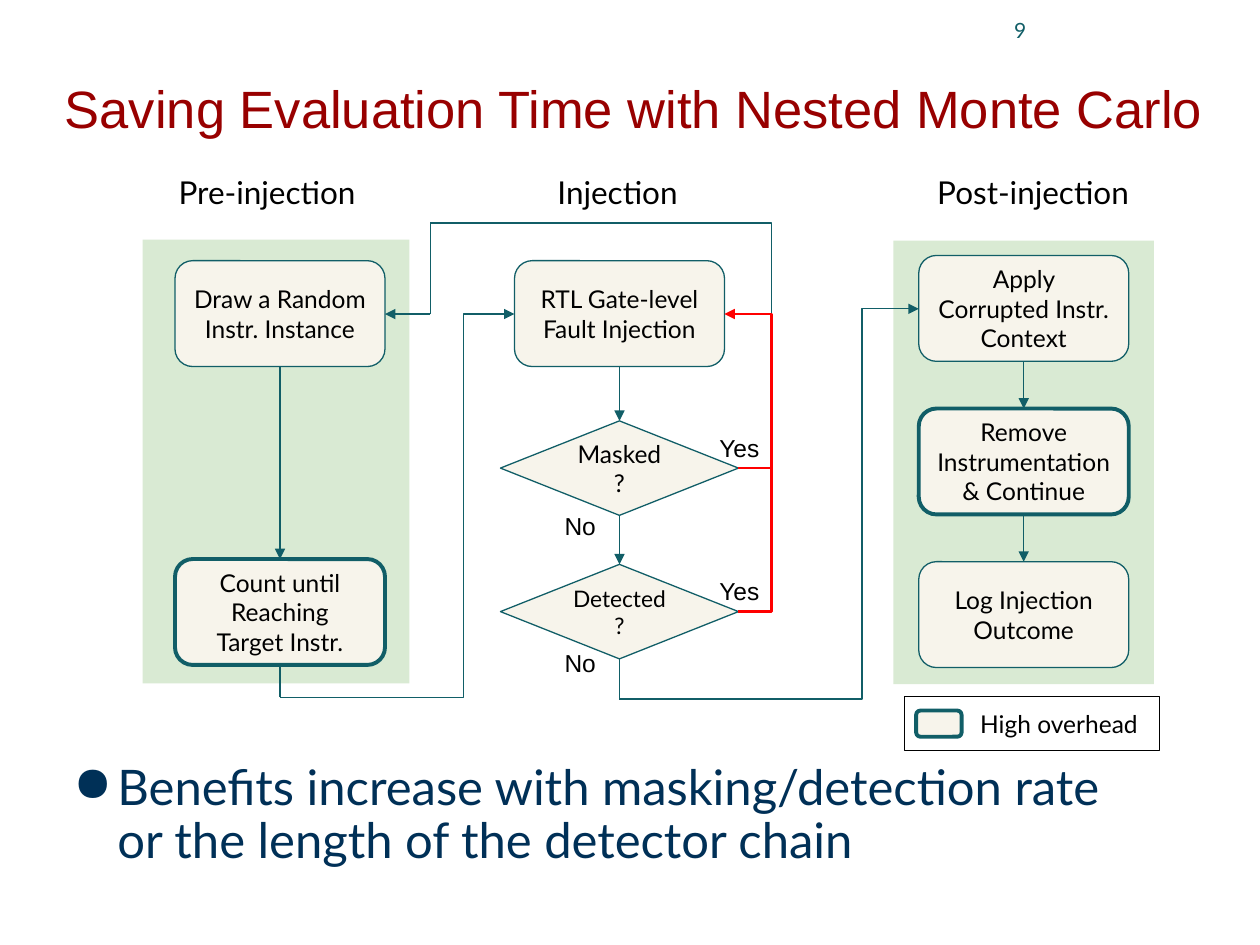
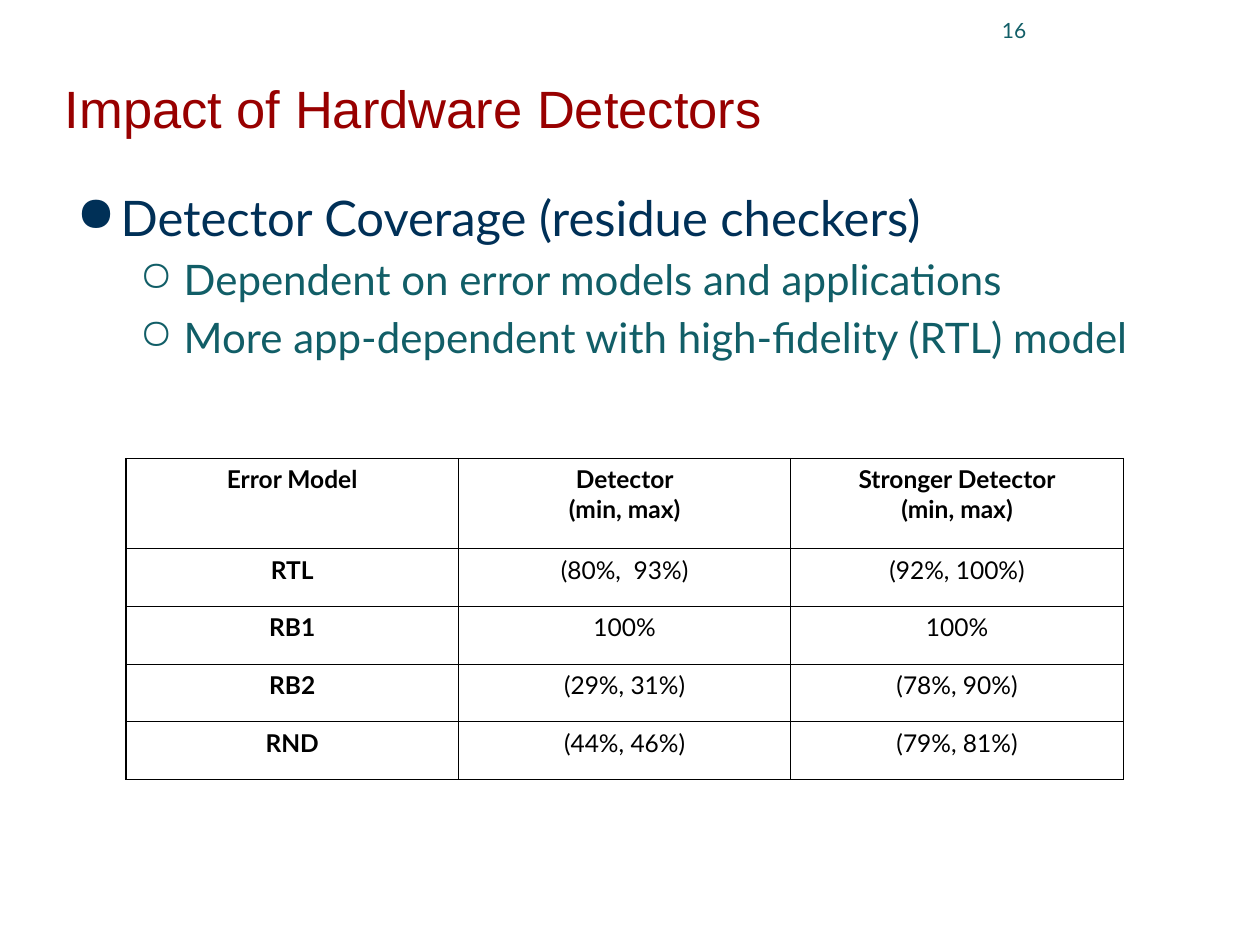
import pptx
import pptx.util
import pptx.oxml
import pptx.oxml.ns
import pptx.dml.color
import pptx.enum.shapes
import pptx.enum.text

Pt = pptx.util.Pt
RGB = pptx.dml.color.RGBColor
SHAPE = pptx.enum.shapes.MSO_SHAPE
LINK = pptx.enum.shapes.MSO_CONNECTOR
ALIGN = pptx.enum.text.PP_ALIGN
ANCHOR = pptx.enum.text.MSO_ANCHOR
qn = pptx.oxml.ns.qn
NS = pptx.oxml.ns.nsdecls("a")

MAROON = RGB(0x98, 0x00, 0x00)
NAVY = RGB(0x00, 0x30, 0x57)
TEAL = RGB(0x11, 0x5E, 0x67)
CREAM = RGB(0xF7, 0xF4, 0xEB)
GREEN = RGB(0xD9, 0xEA, 0xD3)
RED = RGB(0xFF, 0x00, 0x00)
BLACK = RGB(0, 0, 0)


def write(frame, text, size, color=BLACK, face="Lato", align=ALIGN.LEFT,
          anchor=ANCHOR.TOP, pad=7.2, bold=False):
    frame.text = text
    frame.word_wrap = True
    frame.vertical_anchor = anchor
    frame.margin_left = frame.margin_right = Pt(pad)
    frame.margin_top = frame.margin_bottom = Pt(pad)
    for para in frame.paragraphs:
        para.alignment = align
        for run in para.runs:
            run.font.size = Pt(size)
            run.font.name = face
            run.font.bold = bold
            run.font.color.rgb = color


def wire(start, end, bend=None, color=TEAL, width=0.75, arrow=True):
    """Straight line, or an elbow whose upright part stands at x = bend."""
    kind = LINK.STRAIGHT if bend is None else LINK.ELBOW
    line = flow.shapes.add_connector(kind, *[Pt(v) for v in start + end])
    line.line.color.rgb = color
    line.line.width = Pt(width)
    props = line._element.spPr
    if bend is not None:
        ratio = round((bend - start[0]) / (end[0] - start[0]) * 100000)
        geom = props.find(qn("a:prstGeom"))
        geom.remove(geom.find(qn("a:avLst")))
        geom.append(pptx.oxml.parse_xml(
            f'<a:avLst {NS}><a:gd name="adj1" fmla="val {ratio}"/></a:avLst>'))
    if arrow:
        props.find(qn("a:ln")).append(
            pptx.oxml.parse_xml(f'<a:tailEnd {NS} type="triangle"/>'))
    props.append(pptx.oxml.parse_xml(f"<a:effectLst {NS}/>"))


deck = pptx.Presentation()
deck.slide_width, deck.slide_height = Pt(720), Pt(540)

# Title, page number and bullets of both slides
pages = [
    ("Saving Evaluation Time with Nested Monte Carlo", "9",
     (24, 384.5, 696, 164), ANCHOR.MIDDLE, 7.2, 0.9,
     [(0, "Benefits increase with masking/detection rate\v"
          "or the length of the detector chain")]),
    ("Impact of Hardware Detectors", "16",
     (33, 102, 672, 177), ANCHOR.TOP, 0, 1.15,
     [(0, "Detector Coverage (residue checkers)"),
      (1, "Dependent on error models and applications"),
      (1, "More app-dependent with high-fidelity (RTL) model")]),
]
levels = [("●", 28, NAVY), ("○", 24, TEAL)]

for title, page, area, anchor, pad, gap, points in pages:
    slide = deck.slides.add_slide(deck.slide_layouts[6])
    box = slide.shapes.add_textbox(*[Pt(v) for v in area])
    write(box.text_frame, "\n".join(text for _, text in points), 28,
          anchor=anchor, pad=pad)
    for para, (level, _) in zip(box.text_frame.paragraphs, points):
        mark, size, color = levels[level]
        props = para._p.get_or_add_pPr()
        props.set("marL", str(Pt(36 * (level + 1))))
        props.set("indent", str(Pt(-25.2)))
        props.append(pptx.oxml.parse_xml(
            f'<a:buClr {NS}><a:srgbClr val="{color}"/></a:buClr>'))
        props.append(pptx.oxml.parse_xml(f'<a:buChar {NS} char="{mark}"/>'))
        para.level = level
        para.line_spacing = gap
        for run in para.runs:
            run.font.size = Pt(size)
            run.font.color.rgb = color
    box = slide.shapes.add_textbox(Pt(30), Pt(36), Pt(678), Pt(70))
    write(box.text_frame, title, 30, MAROON, "Arial")
    box = slide.shapes.add_textbox(Pt(528), Pt(-1), Pt(65.5), Pt(36))
    write(box.text_frame, page, 12, TEAL, align=ALIGN.RIGHT,
          anchor=ANCHOR.MIDDLE)

flow, cover = deck.slides

# Green panels, flow steps and legend
BOX, GEM = SHAPE.FLOWCHART_ALTERNATE_PROCESS, SHAPE.DIAMOND
WIDE, TALL = 120, 60.5
PRE, MID, POST = 160, 354, 585
steps = [
    (BOX, PRE, 149, "Draw a Random Instr. Instance", 14, 0.75),
    (BOX, PRE, 319.5, "Count until Reaching\nTarget Instr.", 14, 2.25),
    (BOX, MID, 149, "RTL Gate-level Fault Injection", 14, 0.75),
    (GEM, MID, 240.5, "Masked\n?", 14, 0.75),
    (GEM, MID, 322.5, "Detected?", 13, 0.75),
    (BOX, POST, 146, "Apply Corrupted Instr. Context", 14, 0.75),
    (BOX, POST, 233.5, "Remove Instrumentation & Continue", 14, 2.25),
    (BOX, POST, 321, "Log Injection Outcome", 14, 0.75),
]
parts = [
    (SHAPE.RECTANGLE, 81.5, 137, 152.5, 253.5, GREEN, None, 0, "", 14),
    (SHAPE.RECTANGLE, 510.5, 137.5, 149, 253.5, GREEN, None, 0, "", 14),
    (SHAPE.RECTANGLE, 517, 398, 145.5, 31, None, BLACK, 0.75, "", 14),
    (SHAPE.ROUNDED_RECTANGLE, 523.5, 406, 26, 15, CREAM, TEAL, 2.25, "", 14),
]
for kind, mid, top, text, size, edge in steps:
    wide, tall = (WIDE, TALL) if kind == BOX else (136, 54)
    parts.append((kind, mid - wide / 2, top, wide, tall, CREAM, TEAL, edge,
                  text, size))

for kind, left, top, wide, tall, fill, line, edge, text, size in parts:
    part = flow.shapes.add_shape(kind, Pt(left), Pt(top), Pt(wide), Pt(tall))
    part.shadow.inherit = False
    if fill is None:
        part.fill.background()
    else:
        part.fill.solid()
        part.fill.fore_color.rgb = fill
    if line is None:
        part.line.fill.background()
    else:
        part.line.color.rgb = line
        part.line.width = Pt(edge)
    if text:
        write(part.text_frame, text, size, align=ALIGN.CENTER,
              anchor=ANCHOR.MIDDLE)

# Column heads, branch labels and legend text
labels = [
    ("Pre-injection", 95, 91.5, 136, 18, "Lato"),
    ("Injection", 311.5, 91.5, 136, 18, "Lato"),
    ("Post-injection", 528.5, 91.5, 136, 18, "Lato"),
    ("Yes", 404, 240.5, 46, 14, "Arial"),
    ("Yes", 404, 322, 46, 14, "Arial"),
    ("No", 315.5, 284.5, 38, 14, "Arial"),
    ("No", 315.5, 363, 38, 14, "Arial"),
    ("High overhead", 553, 398, 109, 14, "Lato"),
]
for text, left, top, wide, size, face in labels:
    box = flow.shapes.add_textbox(Pt(left), Pt(top), Pt(wide), Pt(21))
    write(box.text_frame, text, size, face=face)

# Arrows down each column
for mid, top, low in [
    (PRE, 209.5, 319.5), (MID, 209.5, 240.5), (MID, 294.5, 322.5),
    (POST, 206.5, 233.5), (POST, 294, 321),
]:
    wire((mid, top), (mid, low))

# Links to the next column
wire((PRE, 380), (PRE, 398.5), arrow=False)
wire((PRE, 398.5), (294, 179.5), bend=265)
wire((MID, 376.5), (MID, 399.5), arrow=False)
wire((MID, 399.5), (525, 176.5), bend=492.5)

# Loops back from the checks
wire((422, 267.5), (246, 127.5), bend=441, arrow=False)
wire((246, 127.5), (246, 179.5), arrow=False)
wire((246, 179.5), (220, 179.5))
wire((422, 267.5), (414, 179.5), bend=441, color=RED, width=1.5)
wire((422, 349.5), (441, 263), bend=441, color=RED, width=1.5, arrow=False)

# Coverage table
rows = [
    ("Error Model", "Detector\n(min, max)", "Stronger Detector\n(min, max)"),
    ("RTL", "(80%,  93%)", "(92%, 100%)"),
    ("RB1", "100%", "100%"),
    ("RB2", "(29%, 31%)", "(78%, 90%)"),
    ("RND", "(44%, 46%)", "(79%, 81%)"),
]
grid = cover.shapes.add_table(5, 3, Pt(72), Pt(262), Pt(570), Pt(184)).table
grid.first_row = grid.horz_banding = False
for col in grid.columns:
    col.width = Pt(190)
for r, row in enumerate(rows):
    grid.rows[r].height = Pt(33 if r else 51.5)
    for c, text in enumerate(row):
        cell = grid.cell(r, c)
        write(cell.text_frame, text, 14, align=ALIGN.CENTER,
              bold=r == 0 or c == 0)
        cell.margin_left = cell.margin_right = Pt(7.2)
        cell.margin_top = cell.margin_bottom = Pt(3.6)
        for side in "LRTB":
            cell._tc.get_or_add_tcPr().append(pptx.oxml.parse_xml(
                f'<a:ln{side} {NS} w="{Pt(0.75)}"><a:solidFill>'
                f'<a:srgbClr val="{BLACK}"/></a:solidFill></a:ln{side}>'))
        cell.fill.background()

deck.save("out.pptx")
